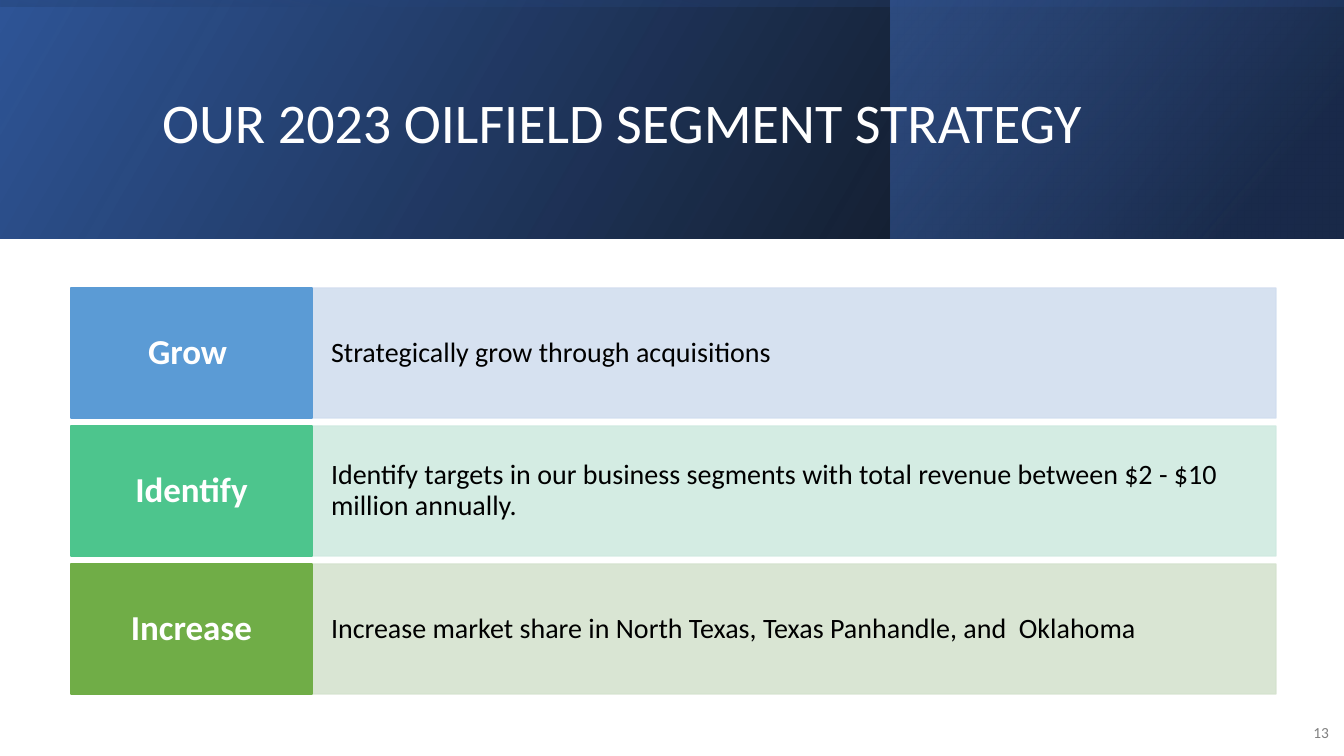
from lxml import etree
from pptx import Presentation
from pptx.dml.color import RGBColor
from pptx.enum.shapes import MSO_SHAPE
from pptx.enum.text import MSO_ANCHOR, PP_ALIGN
from pptx.oxml.ns import qn
from pptx.util import Emu, Pt

RECTANGLE = MSO_SHAPE.RECTANGLE
MIDDLE = MSO_ANCHOR.MIDDLE
LEFT, CENTER, RIGHT = PP_ALIGN.LEFT, PP_ALIGN.CENTER, PP_ALIGN.RIGHT

SLIDE_W, SLIDE_H = 1344, 756
BANNER_H = 239
FONT = "Calibri"
COLORS = {
    "white": "FFFFFF", "black": "000000", "number": "808080",
    "navy": "2F5597", "deep": "203864", "royal": "4472C4",
    "grow": "5B9BD5", "grow_tint": "D2DEEF",
    "identify": "4DC58D", "identify_tint": "D0EAE1",
    "increase": "70AD47", "increase_tint": "D5E3CF",
}
STRATEGIES = [
    ("grow", "Grow ", "Strategically grow through acquisitions"),
    ("identify", "Identify",
     "Identify targets in our business segments with total revenue "
     "between $2 - $10 million annually."),
    ("increase", "Increase",
     "Increase market share in North Texas, Texas Panhandle, and  Oklahoma"),
]
ROW_TOP, ROW_H, ROW_PITCH = 288, 130, 138
LABEL_X, LABEL_W = 71, 241
DETAIL_X, DETAIL_W = LABEL_X + LABEL_W, 964


def px(*lengths):
    return [Emu(round(length * 914400 / 100.8)) for length in lengths]


def rgb(color):
    return RGBColor.from_string(COLORS[color])


def set_alpha(color_element, percent):
    etree.SubElement(color_element, qn("a:alpha")).set("val", str(percent * 1000))


def write(shape, text, size, color, align=LEFT, bold=False, spacing=0.9, insets=None):
    frame = shape.text_frame
    frame.word_wrap = True
    frame.vertical_anchor = MIDDLE
    if insets:
        side, end = px(*insets)
        frame.margin_left = frame.margin_right = side
        frame.margin_top = frame.margin_bottom = end
    paragraph = frame.paragraphs[0]
    paragraph.alignment = align
    paragraph.line_spacing = spacing
    run = paragraph.add_run()
    run.text = text
    run.font.name = FONT
    run.font.size = Pt(size)
    run.font.bold = bold
    run.font.color.rgb = rgb(color)


def add_gradient_band(slide, box, stops, angle, rotation=0):
    band = slide.shapes.add_shape(RECTANGLE, *px(*box))
    band.shadow.inherit = False
    band.line.fill.background()
    band.rotation = rotation
    properties = band._element.spPr
    properties.find(qn("a:xfrm")).set("flipH", "1")
    gradient = etree.Element(qn("a:gradFill"), rotWithShape="1")
    stop_list = etree.SubElement(gradient, qn("a:gsLst"))
    for position, color, alpha in stops:
        stop = etree.SubElement(stop_list, qn("a:gs"), pos=str(position * 1000))
        set_alpha(etree.SubElement(stop, qn("a:srgbClr"), val=COLORS[color]), alpha)
    etree.SubElement(gradient, qn("a:lin"), ang=str(angle * 60000), scaled="0")
    properties.find(qn("a:prstGeom")).addnext(gradient)


def add_panel(slide, box, color, alpha=100):
    panel = slide.shapes.add_shape(RECTANGLE, *px(*box))
    panel.shadow.inherit = False
    panel.fill.solid()
    panel.fill.fore_color.rgb = rgb(color)
    panel.line.color.rgb = rgb(color)
    panel.line.width = Pt(1)
    if alpha < 100:
        for color_element in panel._element.spPr.iter(qn("a:srgbClr")):
            set_alpha(color_element, alpha)
    return panel


def add_banner(slide):
    add_gradient_band(slide, (0, 0, SLIDE_W, BANNER_H),
                      [(0, "black", 96), (100, "navy", 100)], 330)
    add_gradient_band(slide, (891, 0, 452, BANNER_H),
                      [(19, "deep", 68), (100, "royal", 48)], 320)
    offset = (SLIDE_W - BANNER_H) / 2
    add_gradient_band(slide, (offset, -offset, BANNER_H, SLIDE_W),
                      [(23, "navy", 16), (99, "black", 45)], 350, rotation=270)


def add_title(slide, text):
    title = slide.shapes.title
    title.left, title.top, title.width, title.height = px(152, 39, 1072, 173)
    write(title, text, 40, "white")
    slide.shapes._spTree.append(title._element)


def add_strategy(slide, top, key, label, detail):
    detail_panel = add_panel(slide, (DETAIL_X, top, DETAIL_W, ROW_H), key + "_tint", 90)
    write(detail_panel, detail, 20, "black", insets=(19, 33))
    label_panel = add_panel(slide, (LABEL_X, top, LABEL_W, ROW_H), key)
    write(label_panel, label, 25, "white", CENTER, bold=True, insets=(13, 13))


def add_page_number(slide, number):
    page_number = slide.shapes.add_textbox(*px(1290, 712, 49, 40))
    write(page_number, number, 11, "number", RIGHT, spacing=1.0)


def main():
    """Build the oilfield segment strategy slide."""
    deck = Presentation()
    deck.slide_width, deck.slide_height = px(SLIDE_W, SLIDE_H)
    slide = deck.slides.add_slide(deck.slide_layouts[5])
    add_banner(slide)
    add_title(slide, "OUR 2023 OILFIELD SEGMENT STRATEGY")
    add_page_number(slide, "13")
    for row, strategy in enumerate(STRATEGIES):
        add_strategy(slide, ROW_TOP + row * ROW_PITCH, *strategy)
    deck.save("out.pptx")


if __name__ == "__main__":
    main()
